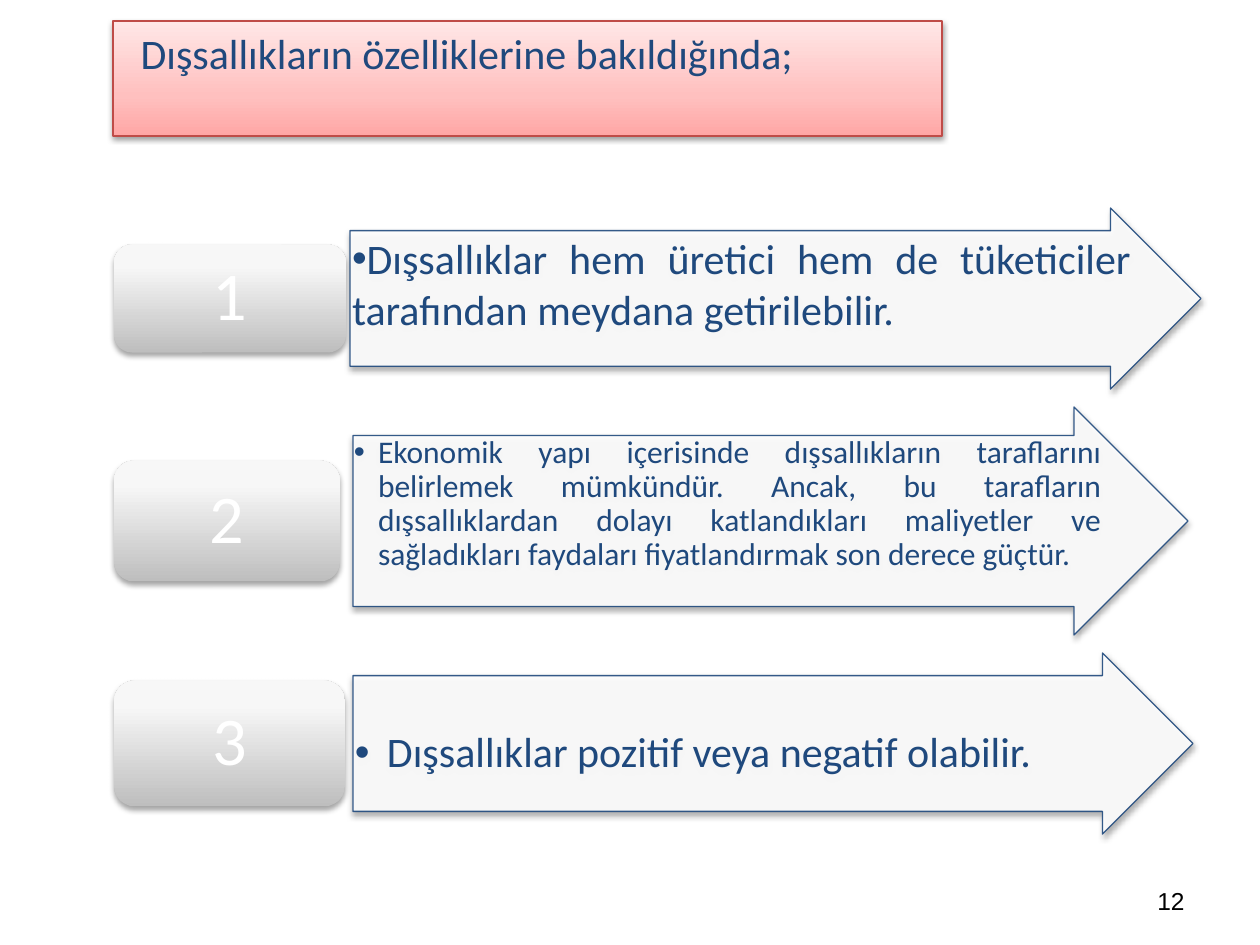
from pptx import Presentation
from pptx.dml.color import RGBColor
from pptx.enum.shapes import MSO_SHAPE
from pptx.enum.text import MSO_ANCHOR, MSO_AUTO_SIZE, PP_ALIGN
from pptx.oxml import parse_xml
from pptx.oxml.ns import nsdecls, qn
from pptx.util import Pt

SCALE = 914400 / 126
NAVY = "1F497D"
TITLE = "Dışsallıkların özelliklerine bakıldığında;"
TITLE_BOX = (113, 21, 829, 115)
TITLE_STOPS = [(0, "FFA6A5"), (35, "FFC0BF"), (100, "FFE7E7")]
NUMBER_STOPS = [(0, "BEBEBE"), (80, "F7F7F7"), (100, "F8F8F8")]
NUMBER_LEFT = 114
PAGE_NUMBER = "12"
ITEMS = [
    dict(text="Dışsallıklar hem üretici hem de tüketiciler tarafından meydana getirilebilir.",
         arrow=(350, 208, 851, 181), number_size=(232, 108),
         size=24, align=PP_ALIGN.JUSTIFY, hanging=0, spacing=1.0, insets=(2, 2, 2, 2)),
    dict(text="Ekonomik yapı içerisinde dışsallıkların taraflarını belirlemek mümkündür. "
              "Ancak, bu tarafların dışsallıklardan dolayı katlandıkları maliyetler ve "
              "sağladıkları faydaları fiyatlandırmak son derece güçtür.",
         arrow=(353, 407, 835, 228), number_size=(226, 121),
         size=18, align=PP_ALIGN.JUSTIFY, hanging=24, spacing=0.9, insets=(1, 1, 1, 1)),
    dict(text="Dışsallıklar pozitif veya negatif olabilir.",
         arrow=(353, 653, 840, 181), number_size=(231, 126),
         size=24, align=PP_ALIGN.LEFT, hanging=32, spacing=0.9, insets=(2, 56, 2, 2)),
]


def px(value):
    return round(value * SCALE)


def color(value):
    return RGBColor.from_string(value)


def set_alpha(color_format_parent, percent):
    element = color_format_parent.find(".//" + qn("a:srgbClr"))
    element.append(parse_xml(f'<a:alpha {nsdecls("a")} val="{percent * 1000}"/>'))


def set_gradient(shape, stops):
    shape.fill.solid()
    properties = shape._element.spPr
    stop_xml = "".join(f'<a:gs pos="{position * 1000}"><a:srgbClr val="{value}"/></a:gs>'
                       for position, value in stops)
    gradient = parse_xml(f'<a:gradFill {nsdecls("a")} rotWithShape="1"><a:gsLst>{stop_xml}</a:gsLst>'
                         '<a:lin ang="16200000" scaled="0"/></a:gradFill>')
    properties.replace(properties.find(qn("a:solidFill")), gradient)


def set_line(shape, value):
    shape.line.color.rgb = color(value)
    shape.line.width = Pt(0.75)


def set_shadow(shape, distance, opacity):
    shape.shadow.inherit = False
    shape._element.spPr.find(qn("a:effectLst")).append(parse_xml(
        f'<a:outerShdw {nsdecls("a")} blurRad="40000" dist="{distance}" dir="5400000" rotWithShape="0">'
        f'<a:srgbClr val="000000"><a:alpha val="{opacity * 1000}"/></a:srgbClr></a:outerShdw>'))


def write_text(shape, text, size=24, font="Calibri", fill=NAVY, align=PP_ALIGN.LEFT,
               anchor=MSO_ANCHOR.TOP, insets=None, spacing=1.0, margin=0, hanging=None):
    frame = shape.text_frame
    frame.word_wrap = True
    frame.auto_size = MSO_AUTO_SIZE.NONE
    frame.vertical_anchor = anchor
    if insets:
        frame.margin_left, frame.margin_top, frame.margin_right, frame.margin_bottom = map(px, insets)
    paragraph = frame.paragraphs[0]
    paragraph.alignment = align
    paragraph.line_spacing = spacing
    properties = paragraph._p.get_or_add_pPr()
    properties.set("marL", str(px(hanging or margin)))
    properties.set("indent", str(-px(hanging or 0)))
    if hanging is not None:
        properties.append(parse_xml(f'<a:buFont {nsdecls("a")} typeface="Arial"/>'))
        properties.append(parse_xml(f'<a:buChar {nsdecls("a")} char="•"/>'))
    run = paragraph.add_run()
    run.text = text
    run.font.size = Pt(size)
    run.font.name = font
    run.font.color.rgb = color(fill)


def add_arrow(slide, item):
    arrow = slide.shapes.add_shape(MSO_SHAPE.RIGHT_ARROW, *map(px, item["arrow"]))
    arrow.adjustments[0] = 0.75
    arrow.adjustments[1] = 0.5
    arrow.fill.solid()
    arrow.fill.fore_color.rgb = color("FFFFFF")
    set_alpha(arrow._element.spPr.find(qn("a:solidFill")), 90)
    set_line(arrow, NAVY)
    set_alpha(arrow._element.spPr.find(qn("a:ln")), 90)
    set_shadow(arrow, 23000, 35)
    write_text(arrow, item["text"], size=item["size"], align=item["align"],
               hanging=item["hanging"], spacing=item["spacing"], insets=item["insets"])


def add_number(slide, item, number):
    _, top, _, arrow_height = item["arrow"]
    width, height = item["number_size"]
    box = slide.shapes.add_shape(MSO_SHAPE.ROUNDED_RECTANGLE, px(NUMBER_LEFT),
                                 px(top + (arrow_height - height) / 2), px(width), px(height))
    set_gradient(box, NUMBER_STOPS)
    box.line.fill.background()
    set_shadow(box, 23000, 35)
    write_text(box, str(number), size=39, fill="FFFFFF", align=PP_ALIGN.CENTER,
               anchor=MSO_ANCHOR.MIDDLE, spacing=0.9, insets=(20, 10, 20, 10))


def main():
    presentation = Presentation()
    presentation.slide_width, presentation.slide_height = px(1260), px(945)
    slide = presentation.slides.add_slide(presentation.slide_layouts[5])

    title = slide.shapes.title
    title.left, title.top, title.width, title.height = map(px, TITLE_BOX)
    set_gradient(title, TITLE_STOPS)
    set_line(title, "BF4C48")
    set_shadow(title, 20000, 38)
    write_text(title, TITLE, align=PP_ALIGN.JUSTIFY, margin=15)

    for number, item in enumerate(ITEMS, 1):
        add_arrow(slide, item)
        add_number(slide, item, number)

    page = slide.shapes.add_textbox(px(903), px(876), px(294), px(50))
    write_text(page, PAGE_NUMBER, size=14, font="Arial", fill="000000",
               align=PP_ALIGN.RIGHT, anchor=MSO_ANCHOR.MIDDLE)
    presentation.save("out.pptx")


if __name__ == "__main__":
    main()
